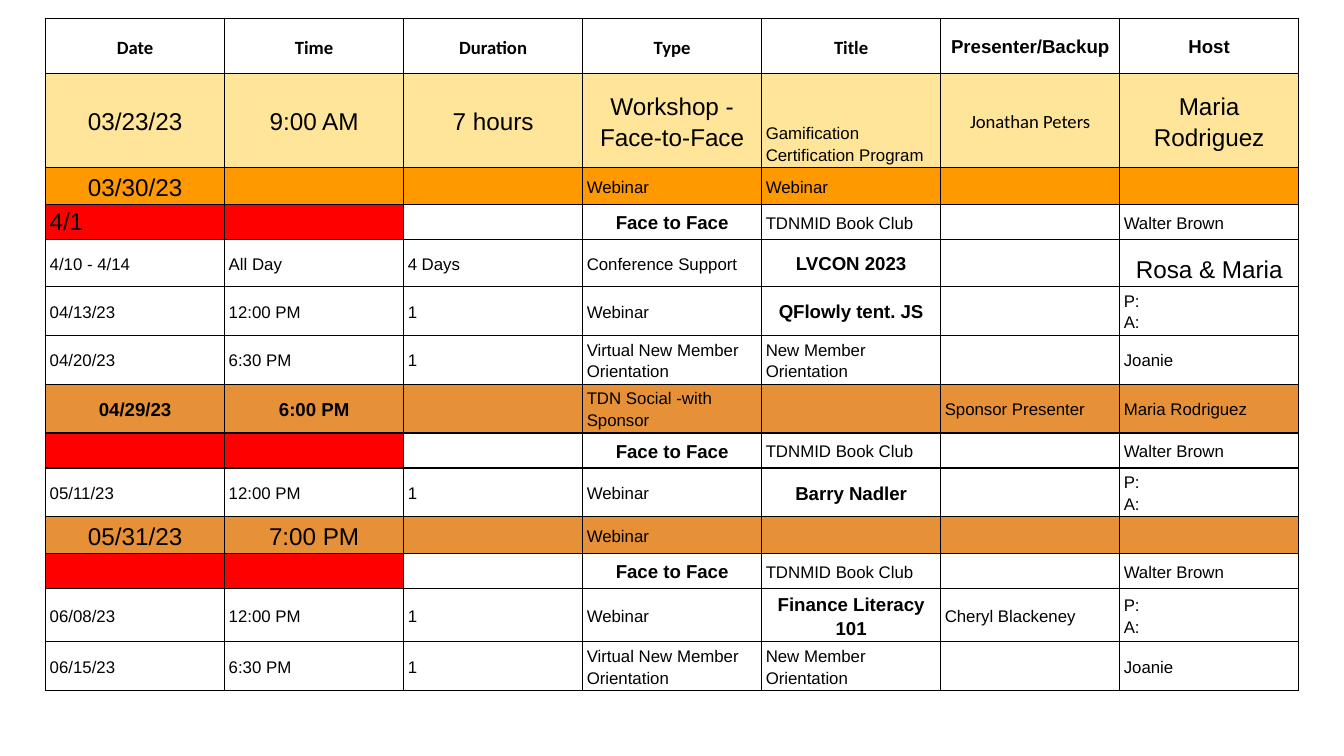
from collections import namedtuple

from lxml import etree
from pptx import Presentation
from pptx.dml.color import RGBColor
from pptx.enum.text import MSO_ANCHOR, PP_ALIGN
from pptx.oxml.ns import qn
from pptx.util import Pt

LEFT, CENTER = PP_ALIGN.LEFT, PP_ALIGN.CENTER
MIDDLE, BOTTOM = MSO_ANCHOR.MIDDLE, MSO_ANCHOR.BOTTOM

Style = namedtuple("Style", "size bold align font anchor spacing",
                   defaults=(LEFT, "Arial", MIDDLE, 1.15))
BODY = Style(9, False)
STRONG = Style(10, True, CENTER)
HEADING = STRONG._replace(font="Calibri")
LARGE = Style(13, False, CENTER)
LARGE_LEFT = LARGE._replace(align=LEFT, spacing=1.0)
LARGE_LOW = LARGE._replace(anchor=BOTTOM)
BODY_LOW = BODY._replace(anchor=BOTTOM)
NAME = Style(10, False, CENTER, "Calibri")

WHITE, CREAM, AMBER, ORANGE, RED = "FFFFFF", "FFE599", "FF9900", "E69138", "FF0000"
COLUMNS = 7
PLAIN = [None] * COLUMNS
CLUB_FILLS = [RED] * 2 + [None] * 5
HOSTS = "P:\nA:"


def club_row(date=""):
    """Return the cells of a book club row."""
    return [(date, LARGE_LEFT), "", "", ("Face to Face", STRONG),
            "TDNMID Book Club", "", "Walter Brown"]


def webinar_row(date, title, presenter=""):
    """Return the cells of a noon webinar row."""
    return [date, "12:00 PM", "1", "Webinar", (title, STRONG), presenter, HOSTS]


def orientation_row(date):
    """Return the cells of a new member orientation row."""
    return [date, "6:30 PM", "1", "Virtual New Member Orientation",
            "New Member Orientation", "", "Joanie"]


ROWS = [
    (29.5, [WHITE] * COLUMNS,
     [(name, HEADING) for name in ("Date", "Time", "Duration", "Type", "Title")]
     + [("Presenter/Backup", STRONG), ("Host", STRONG)]),
    (50.4, [CREAM] * COLUMNS,
     [("03/23/23", LARGE), ("9:00 AM", LARGE), ("7 hours", LARGE),
      ("Workshop - Face-to-Face", LARGE),
      ("Gamification Certification Program", BODY_LOW),
      ("Jonathan Peters", NAME), ("Maria Rodriguez", LARGE)]),
    (19.8, [AMBER] * COLUMNS,
     [("03/30/23", LARGE), "", "", "Webinar", "Webinar", "", ""]),
    (18.7, CLUB_FILLS, club_row("4/1")),
    (25.2, PLAIN,
     ["4/10 - 4/14", "All Day", "4 Days", "Conference Support",
      ("LVCON 2023", STRONG), "", ("Rosa & Maria", LARGE_LOW)]),
    (25.9, PLAIN, webinar_row("04/13/23", "QFlowly tent. JS")),
    (26.2, PLAIN, orientation_row("04/20/23")),
    (26.2, [ORANGE] * COLUMNS,
     [("04/29/23", STRONG), ("6:00 PM", STRONG), "", "TDN Social -with Sponsor",
      "", "Sponsor Presenter", "Maria Rodriguez"]),
    (18.7, CLUB_FILLS, club_row()),
    (26.2, PLAIN, webinar_row("05/11/23", "Barry Nadler")),
    (19.5, [ORANGE] * COLUMNS,
     [("05/31/23", LARGE), ("7:00 PM", LARGE), "", "Webinar", "", "", ""]),
    (18.7, CLUB_FILLS, club_row()),
    (28.4, PLAIN, webinar_row("06/08/23", "Finance Literacy 101", "Cheryl Blackeney")),
    (26.2, PLAIN, orientation_row("06/15/23")),
]


def colour(value):
    """Turn a hex string into a colour."""
    return RGBColor.from_string(value)


def add_borders(cell):
    """Draw a thin black line on all four sides of a cell."""
    properties = cell._tc.get_or_add_tcPr()
    for side in ("a:lnL", "a:lnR", "a:lnT", "a:lnB"):
        line = etree.SubElement(properties, qn(side), w=str(Pt(0.75)))
        solid = etree.SubElement(line, qn("a:solidFill"))
        etree.SubElement(solid, qn("a:srgbClr"), val="000000")


def write_text(cell, text, style):
    """Write and format the text of a cell."""
    cell.vertical_anchor = style.anchor
    cell.margin_left = cell.margin_right = Pt(2.25)
    cell.margin_top = cell.margin_bottom = Pt(1.5)
    cell.text_frame.text = text
    for para in cell.text_frame.paragraphs:
        para.alignment = style.align
        para.line_spacing = style.spacing
        for span in para.runs:
            span.font.size = Pt(style.size)
            span.font.bold = style.bold
            span.font.name = style.font
            span.font.color.rgb = colour("000000")
        if not text:
            etree.SubElement(para._p, qn("a:endParaRPr"), sz=str(BODY.size * 100))


def add_calendar(page, left, top, width):
    """Place the event calendar table."""
    height = sum(row[0] for row in ROWS)
    table = page.shapes.add_table(len(ROWS), COLUMNS, Pt(left), Pt(top),
                                  Pt(width), Pt(height)).table
    table.first_row = table.horz_banding = False
    for column in table.columns:
        column.width = Pt(width / COLUMNS)
    for row, (row_height, fills, entries) in zip(table.rows, ROWS):
        row.height = Pt(row_height)
        for cell, fill, entry in zip(row.cells, fills, entries):
            text, style = (entry, BODY) if isinstance(entry, str) else entry
            add_borders(cell)
            if fill:
                cell.fill.solid()
                cell.fill.fore_color.rgb = colour(fill)
            else:
                cell.fill.background()
            write_text(cell, text, style)


def main():
    """Build and save the calendar slide."""
    deck = Presentation()
    deck.slide_width, deck.slide_height = Pt(720), Pt(405)
    page = deck.slides.add_slide(deck.slide_layouts[6])
    add_calendar(page, 24.4, 9.9, 671.3)
    deck.save("out.pptx")


if __name__ == "__main__":
    main()
